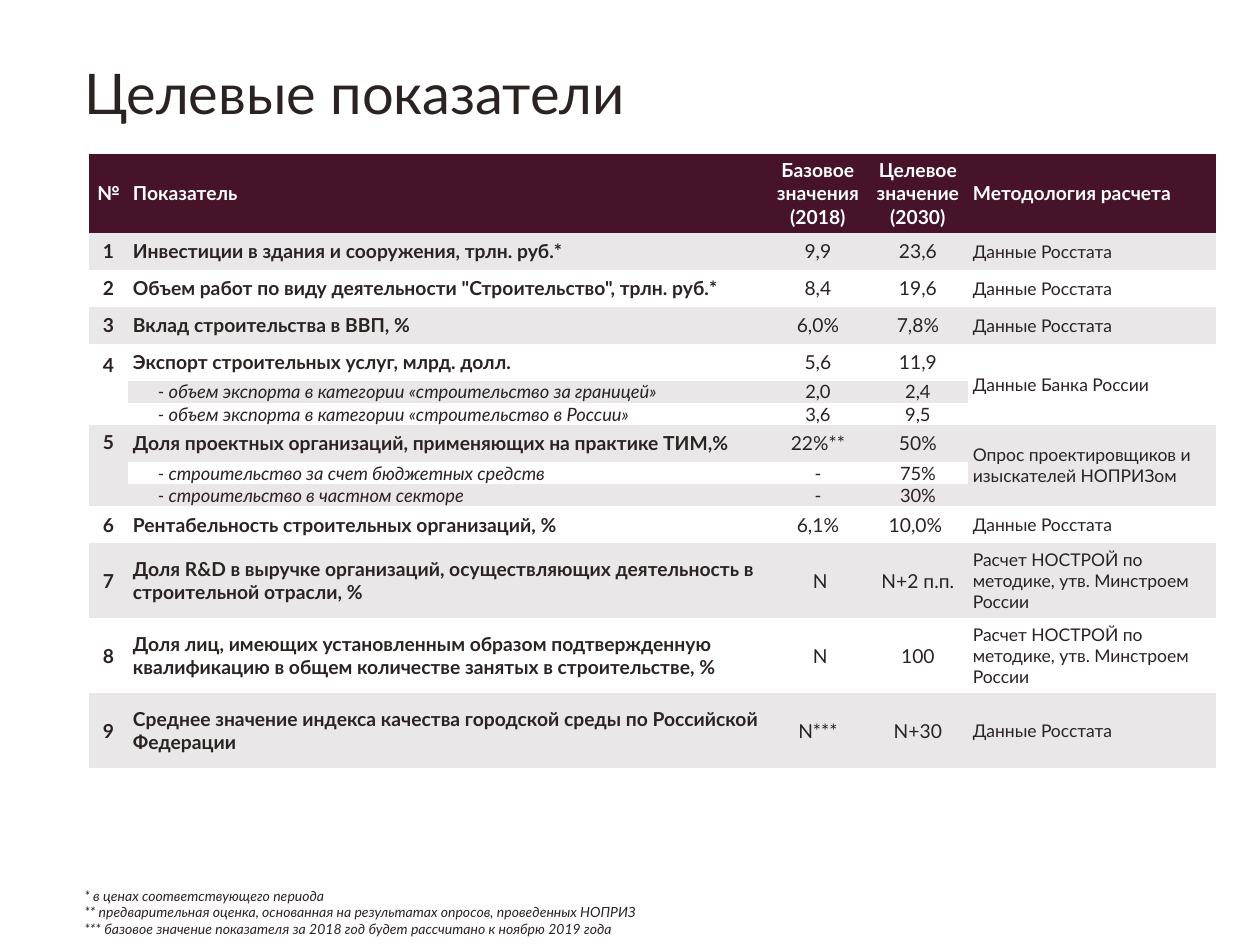
from dataclasses import dataclass

from pptx import Presentation
from pptx.dml.color import RGBColor
from pptx.enum.text import MSO_ANCHOR, PP_ALIGN
from pptx.oxml.ns import qn
from pptx.util import Emu, Pt

LEFT, CENTER = PP_ALIGN.LEFT, PP_ALIGN.CENTER
TOP, MIDDLE = MSO_ANCHOR.TOP, MSO_ANCHOR.MIDDLE
TITLE_ONLY_LAYOUT = 5
NO_STYLE_NO_GRID = "{2D5ABB26-0587-4C30-8999-92F81FD0307C}"

# Content: number, indicator, base value, target value, method
TITLE = "Целевые показатели"
HEADER = ("№", "Показатель", "Базовое\nзначения (2018)",
          "Целевое\nзначение (2030)", "Методология расчета")
STATISTICS = "Данные Росстата"
CALCULATION = "Расчет НОСТРОЙ по методике, утв. Минстроем России"
# An empty number marks a detail row of the indicator above it
INDICATORS = [
    ("1", "Инвестиции в здания и сооружения, трлн. руб.*", "9,9", "23,6", STATISTICS),
    ("2", 'Объем работ по виду деятельности "Строительство", трлн. руб.*',
     "8,4", "19,6", STATISTICS),
    ("3", "Вклад строительства в ВВП, %", "6,0%", "7,8%", STATISTICS),
    ("4", "Экспорт строительных услуг, млрд. долл.", "5,6", "11,9", "Данные Банка России"),
    ("", "- объем экспорта в категории «строительство за границей»", "2,0", "2,4", ""),
    ("", "- объем экспорта в категории «строительство в России»", "3,6", "9,5", ""),
    ("5", "Доля проектных организаций, применяющих на практике ТИМ,%",
     "22%**", "50%", "Опрос проектировщиков и изыскателей НОПРИЗом"),
    ("", "- строительство за счет бюджетных средств", "-", "75%", ""),
    ("", "- строительство в частном секторе", "-", "30%", ""),
    ("6", "Рентабельность строительных организаций, %", "6,1%", "10,0% ", STATISTICS),
    ("7", "Доля R&D в выручке организаций, осуществляющих деятельность в "
     "строительной отрасли, %", " N", "N+2 п.п.", CALCULATION),
    ("8", "Доля лиц, имеющих установленным образом подтвержденную квалификацию "
     "в общем количестве занятых в строительстве, %", " N", "100", CALCULATION),
    ("9", "Среднее значение индекса качества городской среды по Российской Федерации",
     "N***", "N+30", STATISTICS),
]
FOOTNOTES = [
    "* в ценах соответствующего периода",
    "** предварительная оценка, основанная на результатах опросов, проведенных НОПРИЗ",
    "*** базовое значение показателя за 2018 год будет рассчитано к ноябрю 2019 года",
]


@dataclass(frozen=True)
class Theme:
    font: str = "Lato"
    ink: str = "2B2222"
    white: str = "FFFFFF"
    header: str = "47132B"
    band: str = "E9E7E8"
    title_size: float = 32
    body_size: float = 11
    detail_size: float = 10.5
    method_size: float = 10
    note_size: float = 8


THEME = Theme()

# Geometry in px
SCALE = 914400 // 126
SLIDE_SIZE = (1260, 945)
TITLE_BOX = (72, 52, 1071, 149)
TABLE_CORNER = (89, 154)
NOTES_BOX = (72, 881, 881, 63)
COLUMN_WIDTHS = (39, 640, 100, 100, 248)
HEADER_HEIGHT, PLAIN_HEIGHT, DETAIL_HEIGHT, TALL_HEIGHT = 79, 37, 22, 75
CELL_MARGIN, DETAIL_MARGIN = 5, 30
GROUP_NUMBER_TOPS = {"4": 10, "5": 5}
COLUMN_ALIGNS = (CENTER, LEFT, CENTER, CENTER, LEFT)
NUMBER, NAME, METHOD = 0, 1, 4


def px(value):
    return Emu(value * SCALE)


def write_text(frame, lines, size, color=THEME.ink, bold=False, italic=False, align=LEFT):
    for index, line in enumerate(lines):
        para = frame.add_paragraph() if index else frame.paragraphs[0]
        para.alignment = align
        for part, words in enumerate(line.split("\n")):
            if part:
                para.add_line_break()
            span = para.add_run()
            span.text = words
            span.font.name = THEME.font
            span.font.size = Pt(size)
            span.font.bold = bold
            span.font.italic = italic
            span.font.color.rgb = RGBColor.from_string(color)


def row_height(record):
    if not record[NUMBER]:
        return DETAIL_HEIGHT
    return TALL_HEIGHT if len(record[NAME]) > 65 else PLAIN_HEIGHT


def fill_cell(cell, text, fill, column, **text_format):
    cell.fill.solid()
    cell.fill.fore_color.rgb = RGBColor.from_string(fill)
    cell.margin_left = cell.margin_right = px(CELL_MARGIN)
    cell.margin_top = cell.margin_bottom = 0
    cell.vertical_anchor = MIDDLE
    write_text(cell.text_frame, [text], align=COLUMN_ALIGNS[column], **text_format)


def fill_row(table, row, record):
    detail = not record[NUMBER]
    size = THEME.detail_size if detail else THEME.body_size
    for column, text in enumerate(record):
        cell = table.cell(row, column)
        fill_cell(cell, text, THEME.band if row % 2 else THEME.white, column,
                  size=THEME.method_size if column == METHOD else size,
                  bold=column <= NAME and not detail,
                  italic=column == NAME and detail)
        if detail and column == NAME:
            cell.margin_left = px(DETAIL_MARGIN)


def merge_groups(table):
    for row, record in enumerate(INDICATORS, 1):
        last = row
        while last < len(INDICATORS) and not INDICATORS[last][NUMBER]:
            last += 1
        if record[NUMBER] and last > row:
            for column in (NUMBER, METHOD):
                table.cell(row, column).merge(table.cell(last, column))
            number = table.cell(row, NUMBER)
            number.vertical_anchor = TOP
            number.margin_top = px(GROUP_NUMBER_TOPS[record[NUMBER]])


def add_indicator_table(page):
    heights = [HEADER_HEIGHT] + [row_height(record) for record in INDICATORS]
    size = (sum(COLUMN_WIDTHS), sum(heights))
    shape = page.shapes.add_table(len(heights), len(COLUMN_WIDTHS),
                                  *map(px, TABLE_CORNER + size))
    for style in shape.element.iter(qn("a:tableStyleId")):
        style.text = NO_STYLE_NO_GRID
    table = shape.table
    table.horz_banding = False
    for column, width in zip(table.columns, COLUMN_WIDTHS):
        column.width = px(width)
    for row, height in zip(table.rows, heights):
        row.height = px(height)
    for column, text in enumerate(HEADER):
        fill_cell(table.cell(0, column), text, THEME.header, column,
                  size=THEME.body_size, color=THEME.white, bold=True)
    for row, record in enumerate(INDICATORS, 1):
        fill_row(table, row, record)
    merge_groups(table)


def main():
    deck = Presentation()
    deck.slide_width, deck.slide_height = map(px, SLIDE_SIZE)
    page = deck.slides.add_slide(deck.slide_layouts[TITLE_ONLY_LAYOUT])

    # Title
    title = page.shapes.title
    title.left, title.top, title.width, title.height = map(px, TITLE_BOX)
    title.text_frame.vertical_anchor = TOP
    write_text(title.text_frame, [TITLE], THEME.title_size)

    # Table of indicators
    add_indicator_table(page)

    # Footnotes
    notes = page.shapes.add_textbox(*map(px, NOTES_BOX)).text_frame
    notes.word_wrap = True
    write_text(notes, FOOTNOTES, THEME.note_size, italic=True)

    deck.save("out.pptx")


if __name__ == "__main__":
    main()
